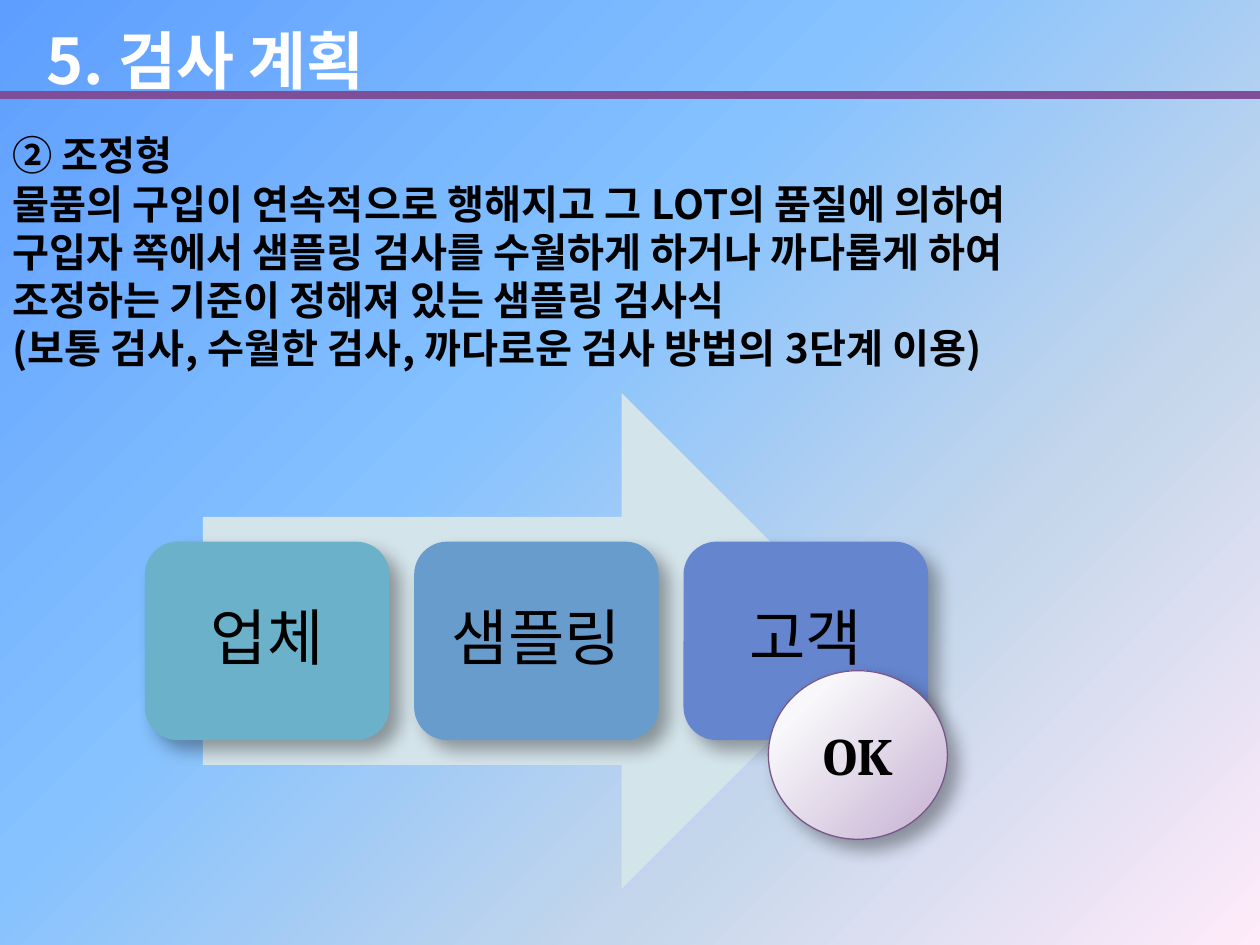
from dataclasses import dataclass

from lxml.etree import SubElement
from pptx import Presentation
from pptx.dml.color import RGBColor
from pptx.enum.shapes import MSO_CONNECTOR, MSO_SHAPE
from pptx.enum.text import MSO_ANCHOR, PP_ALIGN
from pptx.oxml.ns import qn
from pptx.util import Cm, Pt


@dataclass(frozen=True)
class Theme:
    korean: str = "Noto Sans CJK KR"
    latin: str = "Cambria"
    ink: str = "000000"
    white: str = "FFFFFF"
    rule: str = "7E4E99"
    arrow: str = "D4E4EB"
    badge_line: str = "77568A"
    backdrop: tuple = ((0, "5E9EFF"), (40, "85C2FF"), (70, "C4D6EB"), (100, "FFEBFA"))
    badge: tuple = ((20, "F8F7FA"), (100, "C5B0D2"))
    title_size: int = 36
    body_size: int = 23
    step_size: int = 35
    badge_size: int = 30


THEME = Theme()
EXPLANATION = (
    "② 조정형",
    "물품의 구입이 연속적으로 행해지고 그 LOT의 품질에 의하여",
    "구입자 쪽에서 샘플링 검사를 수월하게 하거나 까다롭게 하여",
    "조정하는 기준이 정해져 있는 샘플링 검사식",
    "(보통 검사, 수월한 검사, 까다로운 검사 방법의 3단계 이용)",
)
STEPS = (("업체", "6BB1C9"), ("샘플링", "689CCC"), ("고객", "6585CF"))


def apply_format(target, values):
    for name, value in values.items():
        setattr(target, name, value)


def write_lines(frame, lines, font, size, color, bold=False, **para_format):
    for index, line in enumerate(lines):
        para = frame.add_paragraph() if index else frame.paragraphs[0]
        apply_format(para, para_format)
        span = para.add_run()
        span.text = line
        apply_format(span.font, {"name": font, "size": Pt(size), "bold": bold})
        span.font.color.rgb = RGBColor.from_string(color)
        east_asian = SubElement(span.font._element, qn("a:ea"))
        east_asian.set("typeface", THEME.korean)


def set_gradient(fill, holder, stops):
    fill.gradient()
    gradient = holder.find(qn("a:gradFill"))
    gradient.clear()
    gradient.set("rotWithShape", "1")
    stop_list = SubElement(gradient, qn("a:gsLst"))
    for position, color in stops:
        stop = SubElement(stop_list, qn("a:gs"), pos=str(position * 1000))
        SubElement(stop, qn("a:srgbClr"), val=color)
    return gradient


def add_shadow(shape):
    effects = shape._element.spPr.find(qn("a:effectLst"))
    shadow = SubElement(
        effects, qn("a:outerShdw"), blurRad=str(Pt(10.2)), dist=str(Pt(8)),
        dir="2700000", algn="tl", rotWithShape="0",
    )
    color = SubElement(shadow, qn("a:srgbClr"), val=THEME.ink)
    SubElement(color, qn("a:alpha"), val="35000")


def add_plain_shape(shapes, kind, left, top, width, height, color):
    shape = shapes.add_shape(kind, Cm(left), Cm(top), Cm(width), Cm(height))
    shape.shadow.inherit = False
    shape.fill.solid()
    shape.fill.fore_color.rgb = RGBColor.from_string(color)
    shape.line.fill.background()
    return shape


def paint_background(page):
    fill = page.background.fill
    fill.solid()
    holder = page._element.find(".//" + qn("p:bgPr"))
    gradient = set_gradient(fill, holder, THEME.backdrop)
    SubElement(gradient, qn("a:lin"), ang="2700000", scaled="0")


def add_title(page, text):
    title = page.shapes.title
    apply_format(title, {"left": Cm(0.69), "top": Cm(0.3), "width": Cm(7.8), "height": Cm(1.8)})
    apply_format(title.text_frame, {"word_wrap": False, "vertical_anchor": MSO_ANCHOR.TOP})
    write_lines(title.text_frame, [text], THEME.korean, THEME.title_size,
                THEME.white, True, alignment=PP_ALIGN.LEFT)


def add_rule(page):
    rule = page.shapes.add_connector(MSO_CONNECTOR.STRAIGHT, 0, Cm(1.92), Cm(25.4), Cm(1.92))
    rule.line.width = Pt(4.5)
    rule.line.color.rgb = RGBColor.from_string(THEME.rule)
    SubElement(rule._element.spPr, qn("a:effectLst"))


def add_explanation(page, lines):
    box = page.shapes.add_textbox(0, Cm(2.51), Cm(24.82), Cm(5.18))
    box.text_frame.word_wrap = True
    write_lines(box.text_frame, lines, THEME.korean, THEME.body_size, THEME.ink, True)


def add_process(page, steps):
    group = page.shapes.add_group_shape()
    add_plain_shape(group.shapes, MSO_SHAPE.RIGHT_ARROW, 4.09, 7.92, 13.44, 10, THEME.arrow)
    margins = dict.fromkeys(("margin_left", "margin_top", "margin_right", "margin_bottom"), Cm(0.38))
    for index, (label, color) in enumerate(steps):
        step = add_plain_shape(group.shapes, MSO_SHAPE.ROUNDED_RECTANGLE,
                               2.92 + index * 5.43, 10.92, 4.93, 4, color)
        add_shadow(step)
        apply_format(step.text_frame, {**margins, "vertical_anchor": MSO_ANCHOR.MIDDLE})
        write_lines(step.text_frame, [label], THEME.latin, THEME.step_size, THEME.ink,
                    alignment=PP_ALIGN.CENTER, line_spacing=0.9)


def add_badge(page, label):
    badge = add_plain_shape(page.shapes, MSO_SHAPE.OVAL, 15.49, 13.52, 3.61, 3.4, THEME.white)
    gradient = set_gradient(badge.fill, badge._element.spPr, THEME.badge)
    shade = SubElement(gradient, qn("a:path"))
    shade.set("path", "circle")
    SubElement(shade, qn("a:fillToRect"), l="-15000", t="-15000", r="115000", b="115000")
    badge.line.color.rgb = RGBColor.from_string(THEME.badge_line)
    badge.line.width = Pt(0.75)
    add_shadow(badge)
    badge.text_frame.vertical_anchor = MSO_ANCHOR.MIDDLE
    write_lines(badge.text_frame, [label], THEME.latin, THEME.badge_size,
                THEME.ink, True, alignment=PP_ALIGN.CENTER)


def main():
    deck = Presentation()
    apply_format(deck, {"slide_width": Cm(25.4), "slide_height": Cm(19.05)})
    page = deck.slides.add_slide(deck.slide_layouts[5])
    paint_background(page)
    add_title(page, "5. 검사 계획")
    add_rule(page)
    add_explanation(page, EXPLANATION)
    add_process(page, STEPS)
    add_badge(page, "OK")
    deck.save("out.pptx")


if __name__ == "__main__":
    main()
